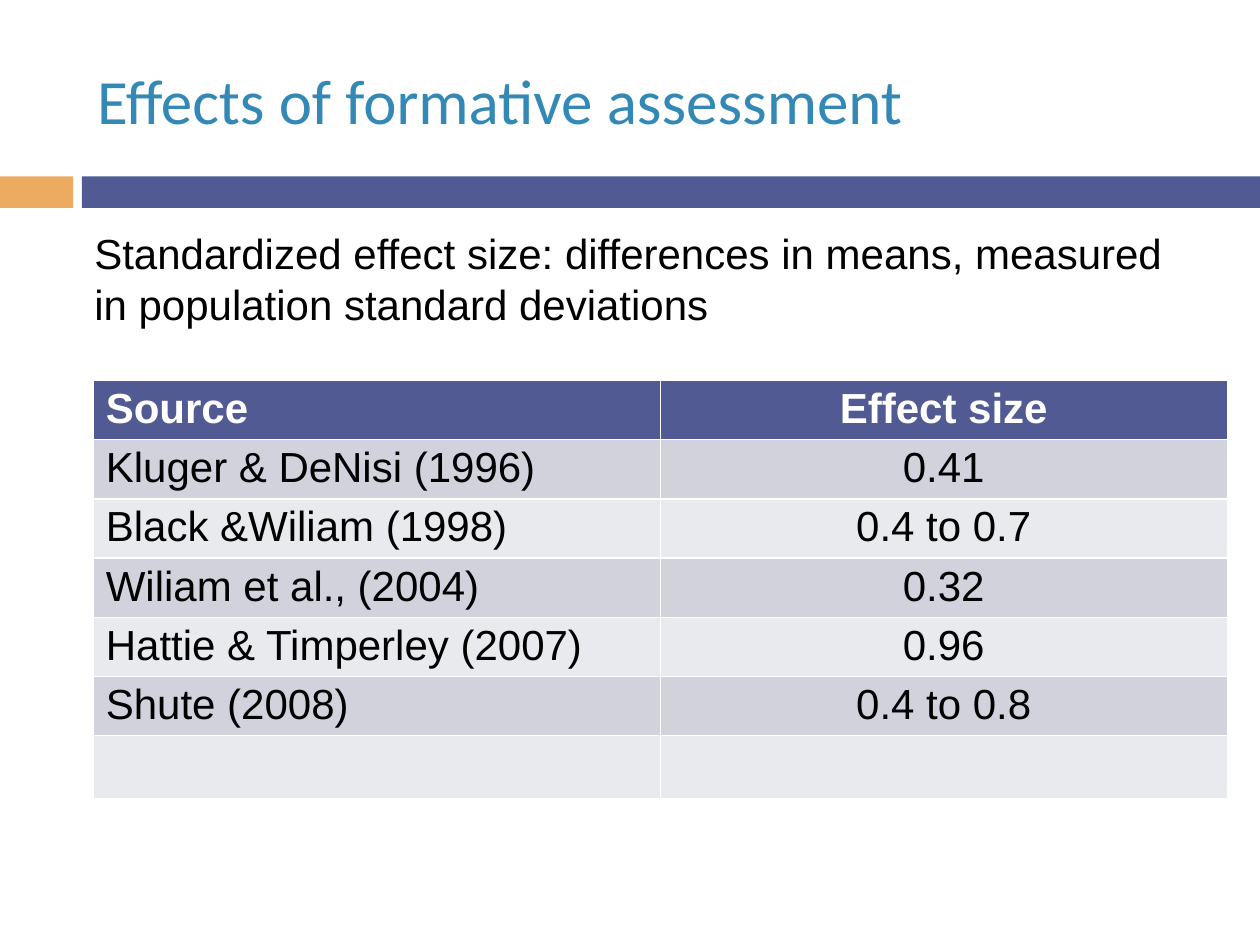
from pptx import Presentation
from pptx.dml.color import RGBColor
from pptx.enum.shapes import MSO_SHAPE
from pptx.enum.text import MSO_ANCHOR, PP_ALIGN
from pptx.util import Inches, Pt

COLORS = {
    "title": "3488B6", "accent": "EDAA61", "band": "525A93",
    "dark_row": "D1D2DC", "light_row": "E9EAEE",
    "text": "000000", "white": "FFFFFF",
}
EFFECT_SIZES = [
    ("Source", "Effect size"),
    ("Kluger & DeNisi (1996)", "0.41"),
    ("Black &Wiliam (1998)", "0.4 to 0.7"),
    ("Wiliam et al., (2004)", "0.32"),
    ("Hattie & Timperley (2007)", "0.96"),
    ("Shute (2008)", "0.4 to 0.8"),
    ("", ""),
]
SLIDE_WIDTH, SLIDE_HEIGHT = 10, 7.5
BAND_TOP, BAND_HEIGHT = 1.4, 0.25
BAND_LEFT = 0.65
COLUMN_WIDTH, ROW_HEIGHT, LAST_ROW_HEIGHT = 4.5, 0.47, 0.5


def color(name):
    return RGBColor.from_string(COLORS[name])


def format_text(text_frame, font_name, size, color_name, bold=False, align=PP_ALIGN.LEFT):
    for paragraph in text_frame.paragraphs:
        paragraph.alignment = align
        # Runs carry the font; an empty paragraph keeps its size for row height
        for target in paragraph.runs or [paragraph]:
            font = target.font
            font.name, font.size, font.bold = font_name, Pt(size), bold
            font.color.rgb = color(color_name)


def add_band(slide, left, right, color_name):
    shape = slide.shapes.add_shape(
        MSO_SHAPE.RECTANGLE, Inches(left), Inches(BAND_TOP),
        Inches(right - left), Inches(BAND_HEIGHT))
    shape.shadow.inherit = False
    shape.fill.solid()
    shape.fill.fore_color.rgb = color(color_name)
    shape.line.fill.background()


def set_title(slide, text):
    title = slide.shapes.title
    title.left, title.top = Inches(0.67), Inches(0.25)
    title.width, title.height = Inches(8.92), Inches(1.08)
    title.text_frame.text = text
    title.text_frame.vertical_anchor = MSO_ANCHOR.MIDDLE
    format_text(title.text_frame, "Calibri", 36, "title")


def add_definition(slide, text):
    box = slide.shapes.add_textbox(
        Inches(BAND_LEFT), Inches(1.76), Inches(8.71), Inches(0.91))
    box.text_frame.word_wrap = True
    box.text_frame.text = text
    format_text(box.text_frame, "Arial", 24, "text")


def add_effect_table(slide, rows):
    height = ROW_HEIGHT * (len(rows) - 1) + LAST_ROW_HEIGHT
    # The default table style supplies the white cell borders
    table = slide.shapes.add_table(
        len(rows), len(rows[0]), Inches(0.74), Inches(3.02),
        Inches(COLUMN_WIDTH * len(rows[0])), Inches(height)).table
    for row_index, values in enumerate(rows):
        is_header = row_index == 0
        is_last = row_index == len(rows) - 1
        table.rows[row_index].height = Inches(LAST_ROW_HEIGHT if is_last else ROW_HEIGHT)
        fill_name = "band" if is_header else ("light_row", "dark_row")[row_index % 2]
        for column_index, value in enumerate(values):
            cell = table.cell(row_index, column_index)
            cell.margin_top = cell.margin_bottom = Inches(0.04)
            cell.fill.solid()
            cell.fill.fore_color.rgb = color(fill_name)
            cell.text_frame.text = value
            format_text(cell.text_frame, "Arial", 24,
                        "white" if is_header else "text", is_header,
                        PP_ALIGN.CENTER if column_index else PP_ALIGN.LEFT)


def main():
    presentation = Presentation()
    presentation.slide_width = Inches(SLIDE_WIDTH)
    presentation.slide_height = Inches(SLIDE_HEIGHT)
    slide = presentation.slides.add_slide(presentation.slide_layouts[5])

    # Two-part band under the title
    add_band(slide, 0, 0.58, "accent")
    add_band(slide, BAND_LEFT, SLIDE_WIDTH, "band")

    # Title, definition and table
    set_title(slide, "Effects of formative assessment")
    add_effect_table(slide, EFFECT_SIZES)
    add_definition(slide, "Standardized effect size: differences in means, "
                          "measured in population standard deviations")
    presentation.save("out.pptx")


if __name__ == "__main__":
    main()
